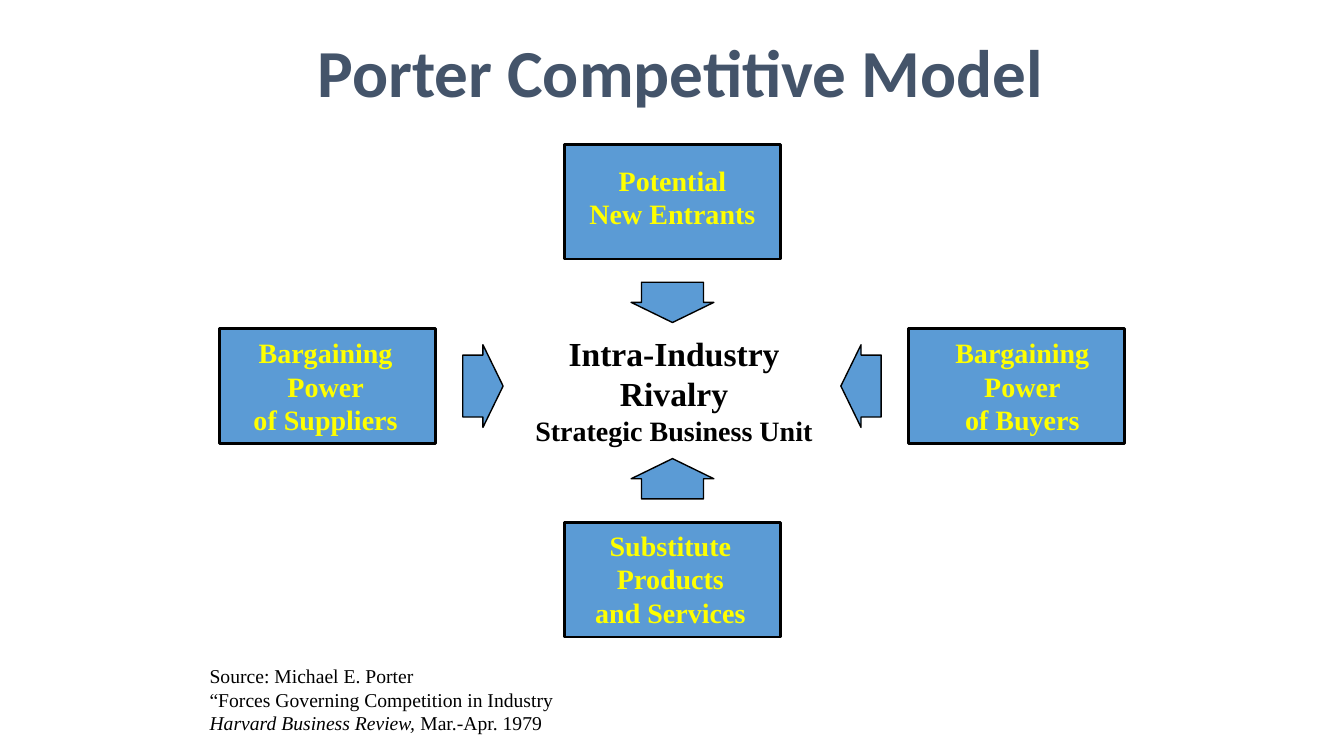
"""Builds a slide of the five competitive forces around a business unit."""
from pptx import Presentation
from pptx.dml.color import RGBColor
from pptx.enum.shapes import MSO_SHAPE as Shape
from pptx.enum.text import MSO_ANCHOR as Anchor, PP_ALIGN as Align
from pptx.util import Inches, Pt

BLUE = RGBColor(0x5B, 0x9B, 0xD5)
SLATE = RGBColor(0x44, 0x54, 0x6A)
YELLOW = RGBColor(0xFF, 0xFF, 0x00)
BLACK = RGBColor(0x00, 0x00, 0x00)
BOX_SIZE = (2.14, 1.14)
LABEL_SIZE = (2.0, 1.1)
ARROW_LENGTH, ARROW_BREADTH = 0.4, 0.82


def write(frame, lines, size=20, font="Times New Roman", color=BLACK, bold=True,
          italic=False, align=Align.CENTER):
    """Write one paragraph per line; a line is a list of (text, changes) runs."""
    for index, line in enumerate(lines):
        paragraph = frame.paragraphs[0] if index == 0 else frame.add_paragraph()
        paragraph.alignment = align
        for text, changes in line:
            run = paragraph.add_run()
            run.text = text
            run.font.name = font
            run.font.size = Pt(changes.get("size", size))
            run.font.bold = bold
            run.font.italic = changes.get("italic", italic)
            run.font.color.rgb = color


def plain(*texts):
    """Turn texts into single-run lines."""
    return [[(text, {})] for text in texts]


class ForcesSlide:
    """Holds the current slide and the style of its elements."""

    def __init__(self, slide, fill=BLUE, outline=BLACK):
        self.slide = slide
        self.fill = fill
        self.outline = outline

    def shape(self, kind, left, top, width, height, line_width):
        """Add a filled and outlined preset shape."""
        shape = self.slide.shapes.add_shape(
            kind, Inches(left), Inches(top), Inches(width), Inches(height))
        shape.shadow.inherit = False
        shape.fill.solid()
        shape.fill.fore_color.rgb = self.fill
        shape.line.color.rgb = self.outline
        shape.line.width = Pt(line_width)
        return shape

    def text(self, lines, left, top, width, height, anchor=Anchor.TOP, **style):
        """Add a wrapping text box."""
        box = self.slide.shapes.add_textbox(
            Inches(left), Inches(top), Inches(width), Inches(height))
        box.text_frame.word_wrap = True
        box.text_frame.vertical_anchor = anchor
        write(box.text_frame, lines, **style)

    def force(self, texts, left, top, label_center, label_top):
        """Add a force box and its label."""
        self.shape(Shape.RECTANGLE, left, top, *BOX_SIZE, line_width=2)
        width, height = LABEL_SIZE
        self.text(plain(*texts), label_center - width / 2, label_top,
                  width, height, color=YELLOW)

    def arrow(self, kind, center_x, center_y):
        """Add a block arrow centred on a point."""
        width, height = ARROW_LENGTH, ARROW_BREADTH
        if kind in (Shape.UP_ARROW, Shape.DOWN_ARROW):
            width, height = height, width
        arrow = self.shape(kind, center_x - width / 2, center_y - height / 2,
                           width, height, line_width=1)
        arrow.adjustments[0] = 0.75
        arrow.adjustments[1] = 0.5


def main():
    """Build and save the slide."""
    presentation = Presentation()
    presentation.slide_width = Inches(13.33)
    presentation.slide_height = Inches(7.5)
    forces = ForcesSlide(presentation.slides.add_slide(presentation.slide_layouts[6]))

    forces.text(plain("Porter Competitive Model"), 2.5, 0.08, 8.5, 1.25,
                anchor=Anchor.MIDDLE, size=48, font="Calibri", color=SLATE)

    for force in (
        (("Bargaining", "Power", "of Suppliers"), 2.18, 3.26, 3.23, 3.28),
        (("Potential", "New Entrants"), 5.6, 1.43, 6.67, 1.57),
        (("Bargaining", "Power", "of Buyers"), 9.01, 3.26, 10.14, 3.28),
        (("Substitute", "Products", "and Services"), 5.6, 5.18, 6.65, 5.19),
    ):
        forces.force(*force)

    forces.text(plain("Intra-Industry", "Rivalry")
                + [[("Strategic Business Unit", {"size": 20})]],
                4.96, 3.25, 3.45, 1.24, size=24)

    for kind, center_x, center_y in (
        (Shape.UP_ARROW, 6.67, 4.75),
        (Shape.LEFT_ARROW, 8.54, 3.83),
        (Shape.DOWN_ARROW, 6.67, 3.0),
        (Shape.RIGHT_ARROW, 4.79, 3.83),
    ):
        forces.arrow(kind, center_x, center_y)

    forces.text(plain("Source: Michael E. Porter",
                      "“Forces Governing Competition in Industry")
                + [[("Harvard Business Review, ", {"italic": True}),
                    ("Mar.-Apr. 1979", {})]],
                1.98, 6.54, 3.61, 0.81, size=14, bold=False, align=Align.LEFT)

    presentation.save("out.pptx")


if __name__ == "__main__":
    main()
